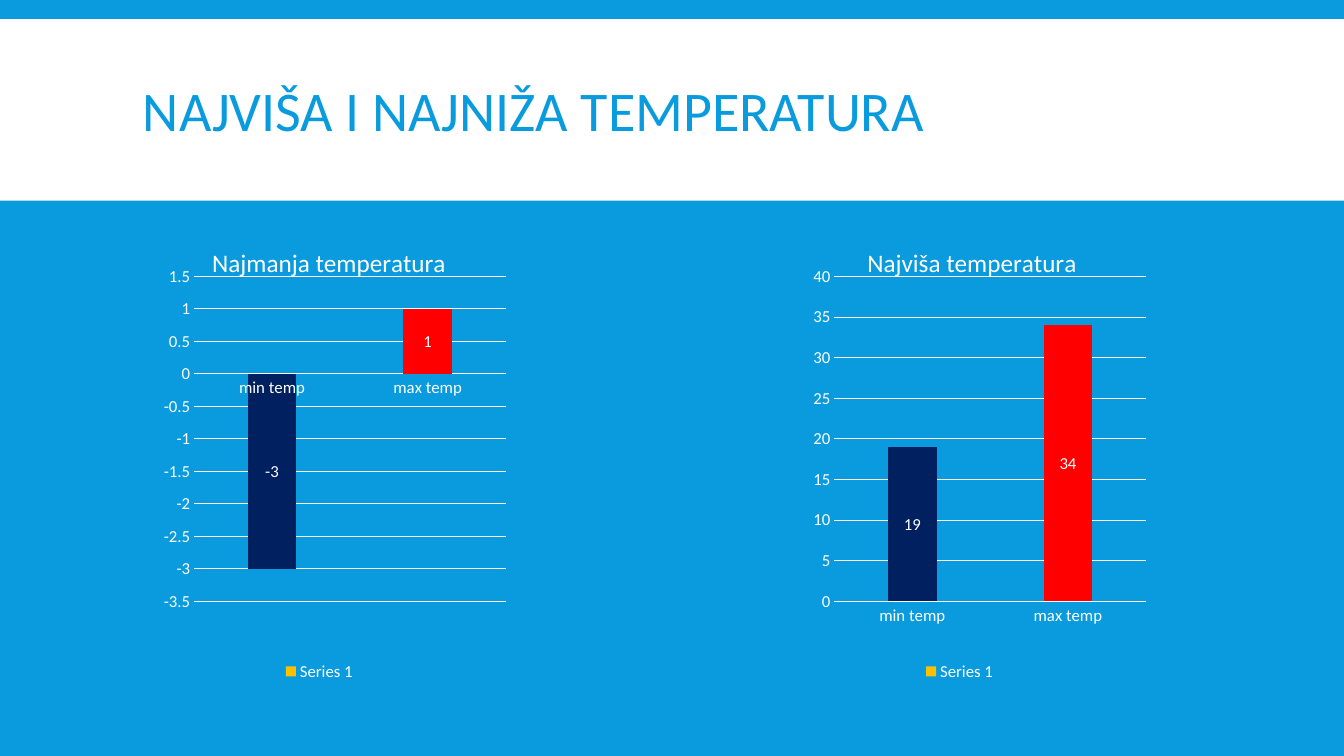
from lxml import etree
from pptx import Presentation
from pptx.chart.data import CategoryChartData
from pptx.dml.color import RGBColor
from pptx.enum import chart as kinds, shapes, text
from pptx.oxml import parse_xml
from pptx.oxml.ns import nsdecls
from pptx.util import Inches, Pt

COLORS = {"blue": "099BDD", "white": "FFFFFF", "gold": "FFC000",
          "navy": "002060", "red": "FF0000"}
FONT = "Calibri"


def style(font, size, color="white"):
    font.name = FONT
    font.size = Pt(size)
    font.bold = False
    font.color.rgb = RGBColor.from_string(COLORS[color])


def place(parent, index, **layout):
    """Give a chart part a manual layout, in fractions of the chart."""
    for old in parent.findall("{*}layout"):
        parent.remove(old)
    node = parse_xml(f"<c:layout {nsdecls('c')}><c:manualLayout/></c:layout>")
    for key, value in layout.items():
        item = etree.SubElement(node[0], node.tag.replace("layout", key))
        item.set("val", str(value))
    parent.insert(index, node)


deck = Presentation()
deck.slide_width = Inches(13.33)
deck.slide_height = Inches(7.5)
page = deck.slides.add_slide(deck.slide_layouts[6])
page.background.fill.solid()
page.background.fill.fore_color.rgb = RGBColor.from_string(COLORS["blue"])

band = page.shapes.add_shape(shapes.MSO_SHAPE.RECTANGLE, 0, Inches(0.19),
                             Inches(13.33), Inches(1.8))
band.shadow.inherit = False
band.fill.solid()
band.fill.fore_color.rgb = RGBColor.from_string(COLORS["white"])
band.line.fill.background()

heading = page.shapes.add_textbox(Inches(1.32), Inches(0.31), Inches(10.7), Inches(1.65))
frame = heading.text_frame
frame.word_wrap = True
frame.vertical_anchor = text.MSO_ANCHOR.MIDDLE
para = frame.paragraphs[0]
para.line_spacing = 0.85
span = para.add_run()
span.text = "NAJVIŠA I NAJNIŽA TEMPERATURA"
style(span.font, 40, "blue")

# title, left, title offset, values, axis minimum, maximum and step
charts = [
    ("Najmanja temperatura", 1.32, 0.2, (-3, 1), -3.5, 1.5, 0.5),
    ("Najviša temperatura", 7.67, 0.24, (19, 34), 0, 40, 5),
]
for title, left, title_x, values, low, high, step in charts:
    data = CategoryChartData()
    data.categories = ["min temp", "max temp"]
    data.add_series("Series 1", values)
    chart = page.shapes.add_chart(
        kinds.XL_CHART_TYPE.COLUMN_CLUSTERED, Inches(left), Inches(2.2),
        Inches(3.7), Inches(4.6), data).chart
    style(chart.font, 12)

    chart.has_title = True
    caption = chart.chart_title.text_frame.paragraphs[0].add_run()
    caption.text = title
    style(caption.font, 18)
    place(chart.chart_title._element, 1, xMode="edge", yMode="edge", x=title_x, y=0.04)

    chart.has_legend = True
    chart.legend.position = kinds.XL_LEGEND_POSITION.BOTTOM
    chart.legend.include_in_layout = False
    style(chart.legend.font, 12)

    category_axis, value_axis = chart.category_axis, chart.value_axis
    for axis in (category_axis, value_axis):
        axis.major_tick_mark = axis.minor_tick_mark = kinds.XL_TICK_MARK.NONE
        style(axis.tick_labels.font, 12)
    value_axis.minimum_scale = low
    value_axis.maximum_scale = high
    value_axis.major_unit = step
    value_axis.format.line.fill.background()
    for line in (category_axis.format.line, value_axis.major_gridlines.format.line):
        line.width = Pt(0.75)
        line.color.rgb = RGBColor.from_string(COLORS["white"])

    plot = chart.plots[0]
    plot.gap_width = 219
    plot.overlap = -27
    plot.vary_by_categories = False
    place(plot._element.getparent(), 0, layoutTarget="inner", xMode="edge",
          yMode="edge", x=0.164, y=0.118, w=0.836, h=0.701)

    series = plot.series[0]
    series.invert_if_negative = False
    fills = [(series, "gold"), (series.points[0], "navy"), (series.points[1], "red")]
    for part, color in fills:
        part.format.fill.solid()
        part.format.fill.fore_color.rgb = RGBColor.from_string(COLORS[color])
    labels = series.data_labels
    labels.show_value = True
    labels.position = kinds.XL_LABEL_POSITION.CENTER
    style(labels.font, 12)

deck.save("out.pptx")
